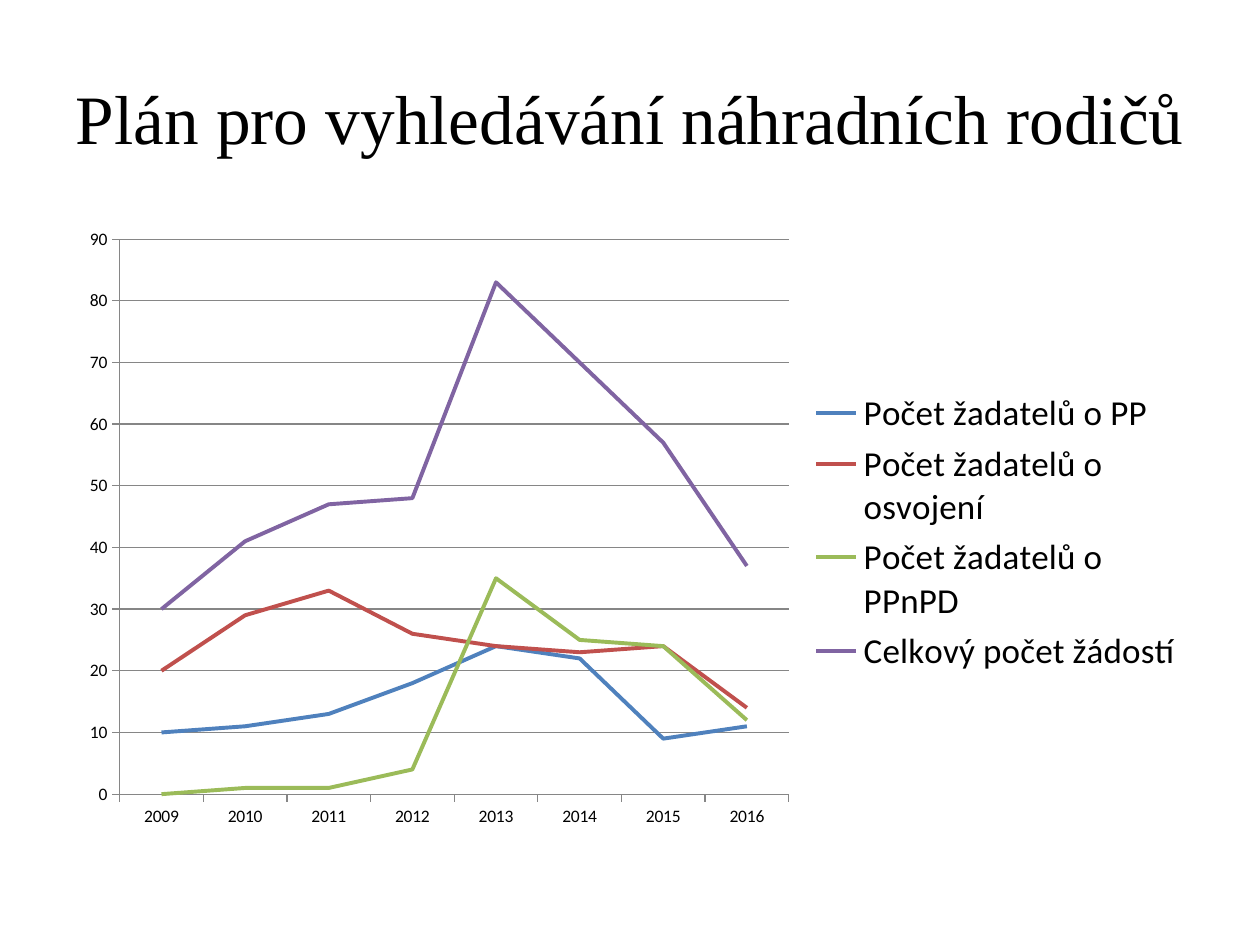
from lxml.etree import SubElement
from pptx import Presentation
from pptx.chart.data import CategoryChartData
from pptx.dml.color import RGBColor
from pptx.enum.chart import XL_CHART_TYPE, XL_LEGEND_POSITION, XL_TICK_MARK
from pptx.enum.text import MSO_ANCHOR, PP_ALIGN
from pptx.oxml.ns import qn
from pptx.util import Inches, Pt

COLORS = {
    "text": "000000", "axis": "868686",
    "foster": "4F81BD", "adopt": "C0504D", "temp": "9BBB59", "total": "8064A2",
}
YEARS = [str(year) for year in range(2009, 2017)]
SERIES = [
    ("Počet žadatelů o PP", "foster", (10, 11, 13, 18, 24, 22, 9, 11)),
    ("Počet žadatelů o osvojení", "adopt", (20, 29, 33, 26, 24, 23, 24, 14)),
    ("Počet žadatelů o PPnPD", "temp", (0, 1, 1, 4, 35, 25, 24, 12)),
    ("Celkový počet žádostí", "total", (30, 41, 47, 48, 83, 70, 57, 37)),
]


def color(name):
    return RGBColor.from_string(COLORS[name])


def set_font(font, size, face="Calibri"):
    font.size, font.name = Pt(size), face
    font.color.rgb = color("text")


def set_line(line, name, width):
    line.color.rgb = color(name)
    line.width = Pt(width)


def add_text(slide, box, text, size, face, align=PP_ALIGN.CENTER):
    frame = slide.shapes.add_textbox(*map(Inches, box)).text_frame
    frame.word_wrap = True
    frame.vertical_anchor = MSO_ANCHOR.MIDDLE
    frame.margin_left = frame.margin_right = 0
    para = frame.paragraphs[0]
    para.alignment = align
    run = para.add_run()
    run.text = text
    set_font(run.font, size, face)


def set_plot(chart, **place):
    """Fix the inner plot area, in fractions of the chart box."""
    area = chart.plots[0]._element.getparent()
    for old in area.findall(qn("c:layout")):
        area.remove(old)
    layout = SubElement(area, qn("c:layout"))
    area.insert(0, layout)
    manual = SubElement(layout, qn("c:manualLayout"))
    rules = {"layoutTarget": "inner", "xMode": "edge", "yMode": "edge", **place}
    for tag, val in rules.items():
        SubElement(manual, qn("c:" + tag)).set("val", str(val))


def add_lines(slide, box):
    data = CategoryChartData()
    data.categories = YEARS
    for name, _, vals in SERIES:
        data.add_series(name, vals)
    chart = slide.shapes.add_chart(
        XL_CHART_TYPE.LINE, *map(Inches, box), data).chart
    chart.has_title = False
    set_font(chart.font, 10)
    chart.plots[0].vary_by_categories = False

    for series, (_, key, _) in zip(chart.plots[0].series, SERIES):
        series.smooth = False
        set_line(series.format.line, key, 2.25)

    for axis in (chart.category_axis, chart.value_axis):
        axis.major_tick_mark = XL_TICK_MARK.OUTSIDE
        axis.minor_tick_mark = XL_TICK_MARK.NONE
        set_line(axis.format.line, "axis", 0.75)
    scale = chart.value_axis
    scale.minimum_scale, scale.maximum_scale, scale.major_unit = 0, 90, 10
    scale.has_major_gridlines = True
    set_line(scale.major_gridlines.format.line, "axis", 0.75)

    chart.has_legend = True
    chart.legend.position = XL_LEGEND_POSITION.RIGHT
    chart.legend.include_in_layout = False
    set_font(chart.legend.font, 20)
    set_plot(chart, x=0.05, y=0.03, w=0.59, h=0.89)


def main():
    deck = Presentation()
    deck.slide_width, deck.slide_height = Inches(10), Inches(7.5)
    slide = deck.slides.add_slide(deck.slide_layouts[6])
    add_text(slide, (0.5, 0.3, 9, 1.25),
             "Plán pro vyhledávání náhradních rodičů", 39.6, "Times New Roman")
    add_lines(slide, (0.5, 1.75, 9, 4.95))
    deck.save("out.pptx")


if __name__ == "__main__":
    main()
